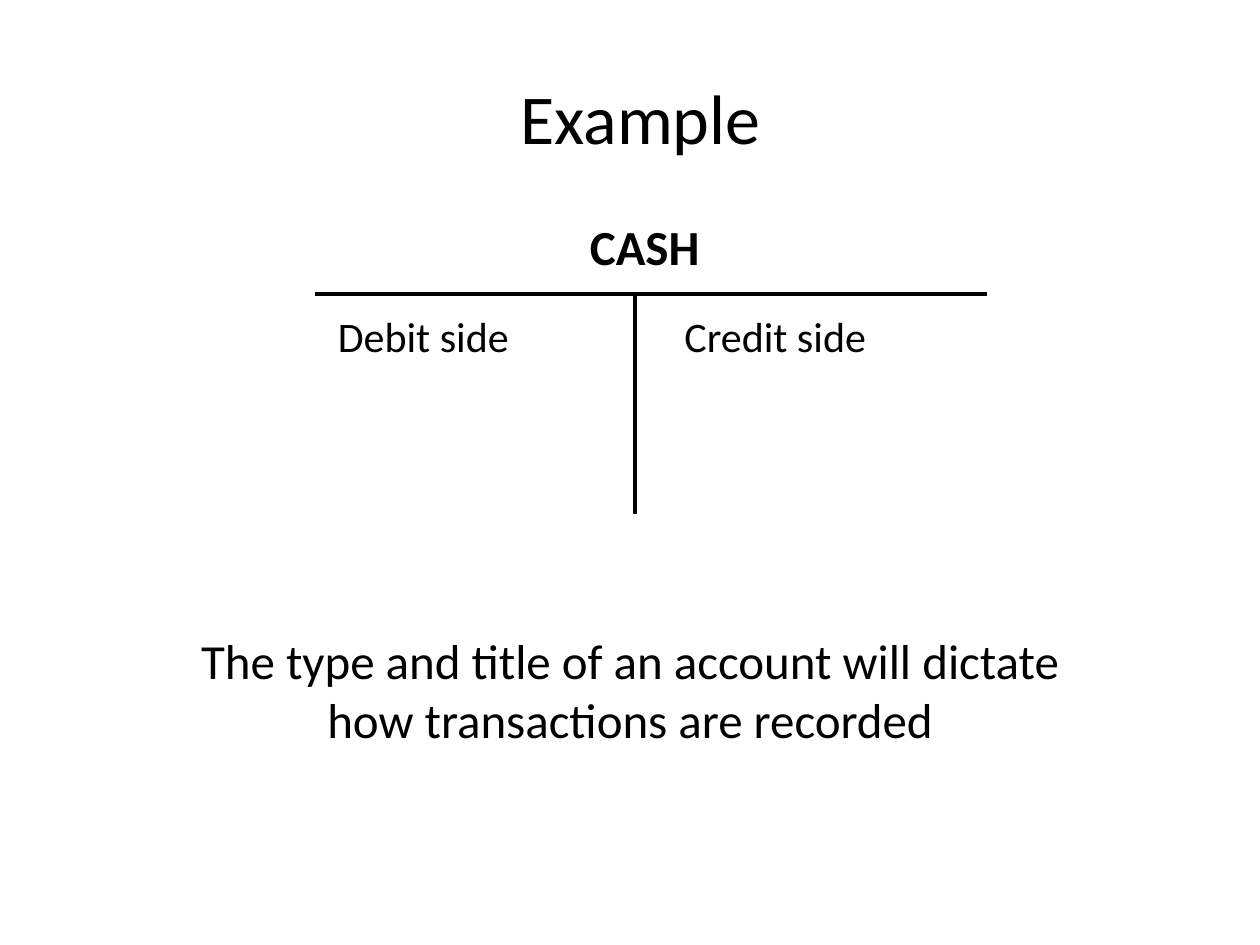
from dataclasses import dataclass

from lxml.etree import SubElement
from pptx import Presentation
from pptx.dml.color import RGBColor
from pptx.enum.shapes import MSO_CONNECTOR as Conn
from pptx.enum.text import MSO_ANCHOR as Anchor, MSO_AUTO_SIZE as AutoSize, PP_ALIGN as Align
from pptx.oxml.ns import qn
from pptx.util import Inches, Pt


@dataclass(frozen=True)
class Theme:
    font: str = "Calibri"
    ink: RGBColor = RGBColor(0, 0, 0)
    title: int = 40
    body: int = 28
    label: int = 24
    rule: int = 2


THEME = Theme()
COLS, ROWS = 120, 90
WIDTH, HEIGHT = Inches(10), Inches(7.5)


def place(x, y, w, h):
    return (round(WIDTH * x / COLS), round(HEIGHT * y / ROWS),
            round(WIDTH * w / COLS), round(HEIGHT * h / ROWS))


def write(sp, text, size=THEME.body, bold=False, align=Align.LEFT, anchor=Anchor.TOP,
          fit=AutoSize.SHAPE_TO_FIT_TEXT):
    tf = sp.text_frame
    tf.word_wrap = True
    tf.auto_size = fit
    tf.vertical_anchor = anchor
    p = tf.paragraphs[0]
    p.alignment = align
    r = p.add_run()
    r.text = text
    r.font.name = THEME.font
    r.font.size = Pt(size)
    r.font.bold = bold
    r.font.color.rgb = THEME.ink


def add_text(s, box, text, **fmt):
    write(s.shapes.add_textbox(*place(*box)), text, **fmt)


def add_rule(s, x, y, w, h):
    left, top, width, height = place(x, y, w, h)
    line = s.shapes.add_connector(Conn.STRAIGHT, left, top, left + width, top + height)
    line.line.color.rgb = THEME.ink
    line.line.width = Pt(THEME.rule)
    SubElement(line._element.spPr, qn("a:effectLst"))


def add_title(s, box, text):
    sp = s.shapes.title
    sp.left, sp.top, sp.width, sp.height = place(*box)
    write(sp, text, size=THEME.title, align=Align.CENTER, anchor=Anchor.MIDDLE,
          fit=AutoSize.NONE)


def add_t_account(s, box, name, debit, credit):
    x, y, w, h = box
    head = 8
    stem = 30.5
    add_rule(s, x, y + head, w, 0)
    add_rule(s, x + stem, y + head, 0, h - head)
    add_text(s, (x + 25, y, 14, 6.8), name, bold=True)
    for offset, label in ((1, debit), (34, credit)):
        add_text(s, (x + offset, y + head + 1, 27.5, 6), label, size=THEME.label)


def add_note(s, box, text):
    add_text(s, box, text, align=Align.CENTER)


def main():
    prs = Presentation()
    prs.slide_width, prs.slide_height = WIDTH, HEIGHT
    s = prs.slides.add_slide(prs.slide_layouts[5])
    add_title(s, (7, 3.6, 108, 15), "Example")
    add_t_account(s, (30, 20, 64, 29), "CASH", "Debit side", "Credit side")
    add_note(s, (16, 59.5, 88, 12.5),
             "The type and title of an account will dictate how transactions are recorded")
    prs.save("out.pptx")


if __name__ == "__main__":
    main()
